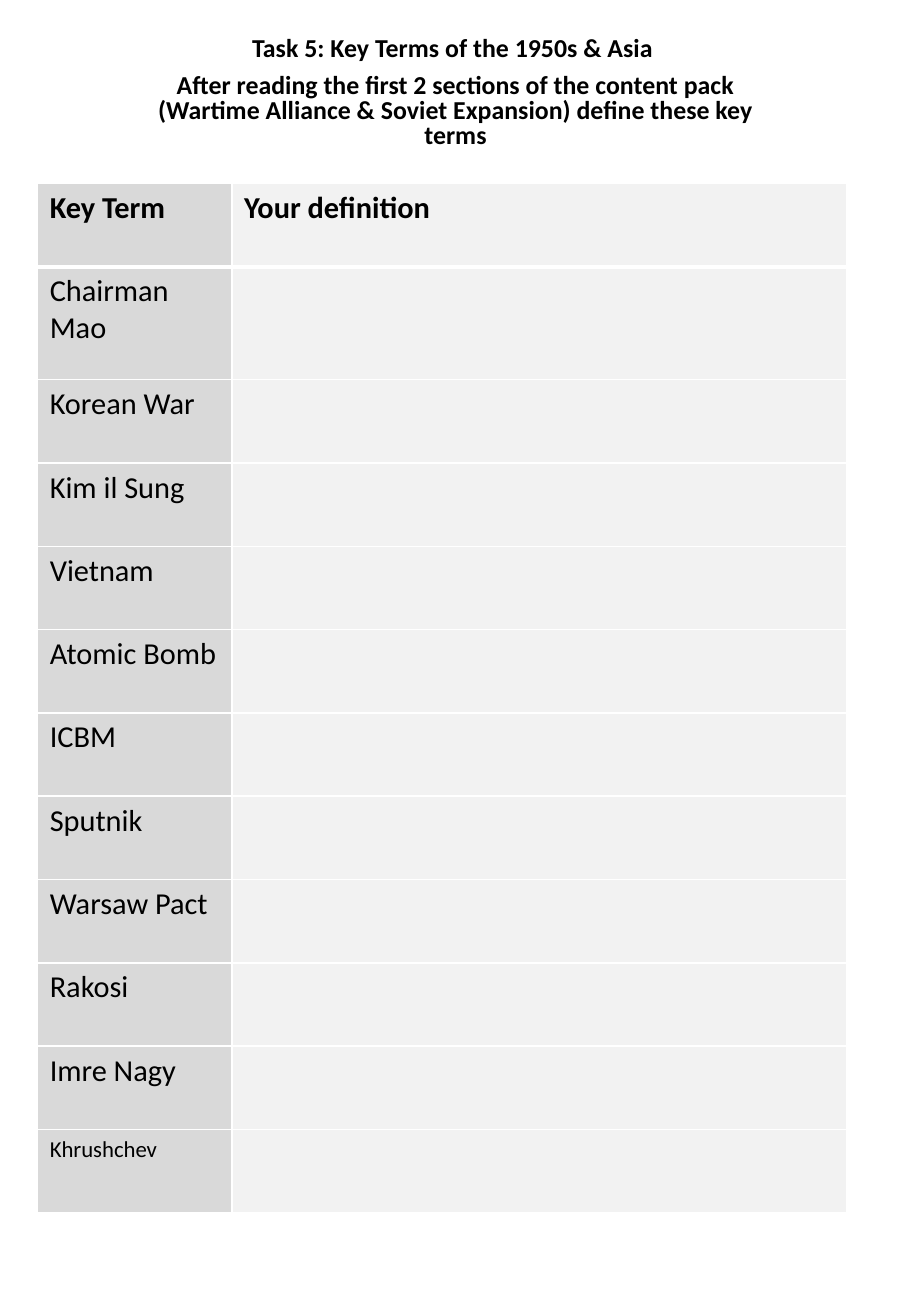
from dataclasses import dataclass

from lxml import etree
from pptx import Presentation
from pptx.dml.color import RGBColor
from pptx.enum.text import PP_ALIGN
from pptx.oxml.ns import qn
from pptx.util import Inches, Pt

CENTER = PP_ALIGN.CENTER
FONT = "Calibri"
BLACK = RGBColor(0x00, 0x00, 0x00)
WHITE = RGBColor(0xFF, 0xFF, 0xFF)
TERM_GREY = RGBColor(0xD9, 0xD9, 0xD9)
DEFINITION_GREY = RGBColor(0xF2, 0xF2, 0xF2)

TABLE_HEIGHT = 8.47
TALL_ROW = 1
TALL_ROW_HEIGHT = 0.93
COLUMN_WIDTHS = (1.6, 5.06)
BODY_SIZE = 18
SIDES = ("L", "R", "T", "B")


@dataclass
class Entry:
    term: str
    definition: str = ""
    size: float = BODY_SIZE
    heading: bool = False


HEADINGS = (
    "Task 5: Key Terms of the 1950s & Asia ",
    "After reading the first 2 sections of the content pack "
    "(Wartime Alliance & Soviet Expansion) define these key terms",
)
ENTRIES = (
    Entry("Key Term", "Your definition", heading=True),
    Entry("Chairman Mao"),
    Entry("Korean War"),
    Entry("Kim il Sung"),
    Entry("Vietnam"),
    Entry("Atomic Bomb"),
    Entry("ICBM"),
    Entry("Sputnik"),
    Entry("Warsaw Pact"),
    Entry("Rakosi"),
    Entry("Imre Nagy"),
    Entry("Khrushchev", size=13.5),
)


def add_run(paragraph, text: str, size: float, bold: bool) -> None:
    run = paragraph.add_run()
    run.text = text
    run.font.name = FONT
    run.font.size = Pt(size)
    run.font.bold = bold
    run.font.color.rgb = BLACK


def add_heading(slide) -> None:
    box = slide.shapes.add_textbox(Inches(0.94), Inches(0.26), Inches(5.62), Inches(1.01))
    frame = box.text_frame
    frame.word_wrap = True
    for index, line in enumerate(HEADINGS):
        paragraph = frame.add_paragraph() if index else frame.paragraphs[0]
        paragraph.alignment = CENTER
        paragraph.line_spacing = 0.8
        paragraph.space_before = Pt(7.5)
        add_run(paragraph, line, 15.3, True)


def add_border(cell, side: str, width: float) -> None:
    properties = cell._tc.get_or_add_tcPr()
    line = etree.SubElement(properties, qn(f"a:ln{side}"), w=str(Pt(width)))
    fill = etree.SubElement(line, qn("a:solidFill"))
    etree.SubElement(fill, qn("a:srgbClr"), val=str(WHITE))


def fill_cell(cell, text: str, entry: Entry, row: int, color: RGBColor) -> None:
    for side in SIDES:
        under_heading = (side == "B" and row == 0) or (side == "T" and row == 1)
        add_border(cell, side, 3 if under_heading else 1)
    cell.fill.solid()
    cell.fill.fore_color.rgb = color
    if text:
        add_run(cell.text_frame.paragraphs[0], text, entry.size, entry.heading)


def add_terms_table(slide) -> None:
    table = slide.shapes.add_table(
        len(ENTRIES), len(COLUMN_WIDTHS),
        Inches(0.31), Inches(1.51), Inches(sum(COLUMN_WIDTHS)), Inches(TABLE_HEIGHT),
    ).table
    table.horz_banding = False
    for column, width in zip(table.columns, COLUMN_WIDTHS):
        column.width = Inches(width)
    row_height = (TABLE_HEIGHT - TALL_ROW_HEIGHT) / (len(ENTRIES) - 1)
    for row, entry in enumerate(ENTRIES):
        table.rows[row].height = Inches(TALL_ROW_HEIGHT if row == TALL_ROW else row_height)
        fill_cell(table.cell(row, 0), entry.term, entry, row, TERM_GREY)
        fill_cell(table.cell(row, 1), entry.definition, entry, row, DEFINITION_GREY)


def main() -> None:
    presentation = Presentation()
    presentation.slide_width = Inches(7.5)
    presentation.slide_height = Inches(10.83)
    slide = presentation.slides.add_slide(presentation.slide_layouts[6])
    add_heading(slide)
    add_terms_table(slide)
    presentation.save("out.pptx")


if __name__ == "__main__":
    main()
